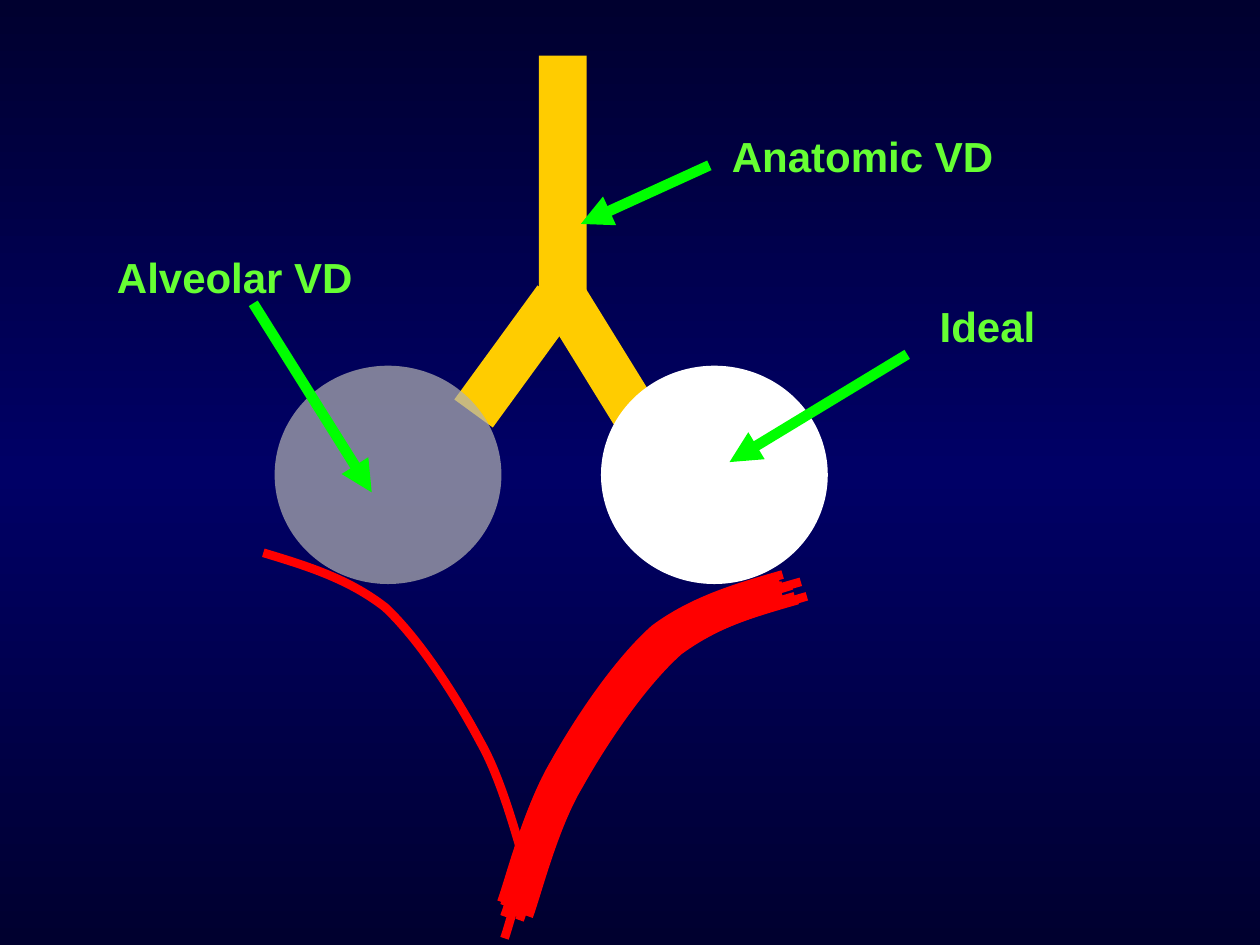
from collections import namedtuple
from copy import deepcopy

from pptx import Presentation
from pptx import util as u
from pptx.dml.color import RGBColor
from pptx.enum import shapes, text
from pptx.oxml import ns, xmlchemy

NAVY = RGBColor(0x00, 0x00, 0x2F)
BLUE = RGBColor(0x00, 0x00, 0x66)
GOLD = RGBColor(0xFF, 0xCC, 0x00)
GRAY = RGBColor(0xB2, 0xB2, 0xB2)
WHITE = RGBColor(0xFF, 0xFF, 0xFF)
RED = RGBColor(0xFF, 0x00, 0x00)
GREEN = RGBColor(0x00, 0xFF, 0x00)
LIME = RGBColor(0x66, 0xFF, 0x33)

LABEL_FONT = {"name": "Arial", "size": u.Pt(24), "bold": True}
Box = namedtuple("Box", "left top width height")
SLIDE = Box(0, 0, u.Inches(10), u.Inches(7.5))

VESSEL_CURVE = [
    (1, 0), (0.84, 0.04), (0.68, 0.08), (0.54, 0.17), (0.41, 0.27),
    (0.27, 0.45), (0.18, 0.59), (0.09, 0.72), (0.03, 0.93), (0, 1),
]
STRANDS = [
    (0.01, 0, 0.92, 0.88), (0.01, 0.03, 0.92, 0.88), (0.01, 0.06, 0.92, 0.88),
    (0.09, 0.06, 0.92, 0.88), (0.05, 0.06, 0.92, 0.88), (0.01, 0.03, 0.95, 0.97),
    (0, 0.02, 0.92, 0.88), (0.07, 0.02, 0.92, 0.88), (0.06, 0.07, 0.92, 0.88),
]
LABELS = [
    ("Alveolar VD", (0.083, 0.26, 0.207, 0.067), (0.201, 0.321), (0.295, 0.521)),
    ("Ideal", (0.736, 0.311, 0.096, 0.067), (0.72, 0.375), (0.579, 0.489)),
    ("Anatomic VD", (0.571, 0.132, 0.228, 0.067), (0.563, 0.175), (0.461, 0.237)),
]


def point(box, x, y):
    return round(box.left + x * box.width), round(box.top + y * box.height)


def within(box, x, y, width, height):
    return Box(*point(box, x, y), round(width * box.width), round(height * box.height))


def add_child(parent, tag, **values):
    child = xmlchemy.OxmlElement(tag)
    for name, value in values.items():
        child.set(name, value)
    parent.append(child)
    return child


def paint_background(page):
    fill = page.background.fill
    fill.gradient()
    stops = page.element.find(".//" + ns.qn("a:gsLst"))
    stops.append(deepcopy(stops[-1]))
    for stop, position, color in zip(fill.gradient_stops, (0, 0.5, 1), (NAVY, BLUE, NAVY)):
        stop.position = position
        stop.color.rgb = color
    fill.gradient_angle = 90


def add_solid(page, kind, box, color, rotation=0):
    solid = page.shapes.add_shape(kind, *box)
    solid.shadow.inherit = False
    solid.fill.solid()
    solid.fill.fore_color.rgb = color
    solid.line.fill.background()
    solid.rotation = rotation
    return solid


def draw_airway(page, box):
    tubes = [
        ((0.36, 0, 0.36, 0.74), 0),
        ((0, 0.62, 0.36, 0.38), 36.1),
        ((0.64, 0.62, 0.36, 0.38), 328.3),
    ]
    for shares, rotation in tubes:
        add_solid(page, shapes.MSO_SHAPE.RECTANGLE, within(box, *shares), GOLD, rotation)


def draw_alveoli(page, box):
    dead, ideal = [
        add_solid(page, shapes.MSO_SHAPE.OVAL, within(box, x, 0, 0.41, 1), color)
        for x, color in ((0, GRAY), (0.59, WHITE))
    ]
    color = dead.fill._xPr.find(".//" + ns.qn("a:srgbClr"))
    add_child(color, "a:alpha", val="71000")


def draw_vessel(page, box, mirrored=False):
    start, *rest = [point(box, 1 - x if mirrored else x, y) for x, y in VESSEL_CURVE]
    builder = page.shapes.build_freeform(*start)
    builder.add_line_segments(rest, close=False)
    vessel = builder.convert_to_shape()
    outline = vessel.element.find(".//" + ns.qn("a:path"))
    lines = outline.findall(ns.qn("a:lnTo"))
    for first in range(0, len(lines), 3):
        curve = add_child(outline, "a:cubicBezTo")
        for line in lines[first:first + 3]:
            curve.append(line[0])
            outline.remove(line)
    vessel.shadow.inherit = False
    vessel.fill.background()
    vessel.line.color.rgb = RED
    vessel.line.width = u.Pt(5)


def draw_bundle(page, box):
    for shares in STRANDS:
        draw_vessel(page, within(box, *shares))


def draw_arrow(page, start, end):
    arrow = page.shapes.add_connector(shapes.MSO_CONNECTOR.STRAIGHT, *start, *end)
    arrow.line.color.rgb = GREEN
    arrow.line.width = u.Pt(6)
    add_child(arrow.line._get_or_add_ln(), "a:tailEnd", type="triangle")
    add_child(arrow.element.spPr, "a:effectLst")


def draw_label(page, box, wording):
    frame = page.shapes.add_textbox(*box).text_frame
    frame.word_wrap = False
    frame.auto_size = text.MSO_AUTO_SIZE.SHAPE_TO_FIT_TEXT
    span = frame.paragraphs[0].add_run()
    span.text = wording
    for name, value in LABEL_FONT.items():
        setattr(span.font, name, value)
    span.font.color.rgb = LIME


def draw_labels(page, box):
    for wording, shares, start, end in LABELS:
        draw_arrow(page, point(box, *start), point(box, *end))
        draw_label(page, within(box, *shares), wording)


def main():
    deck = Presentation()
    deck.slide_width, deck.slide_height = SLIDE.width, SLIDE.height
    page = deck.slides.add_slide(deck.slide_layouts[6])
    paint_background(page)
    draw_airway(page, within(SLIDE, 0.39, 0.059, 0.105, 0.393))
    draw_alveoli(page, within(SLIDE, 0.218, 0.387, 0.439, 0.231))
    draw_vessel(page, within(SLIDE, 0.209, 0.585, 0.21, 0.339), mirrored=True)
    draw_bundle(page, within(SLIDE, 0.398, 0.608, 0.24, 0.385))
    draw_labels(page, SLIDE)
    deck.save("out.pptx")


if __name__ == "__main__":
    main()
